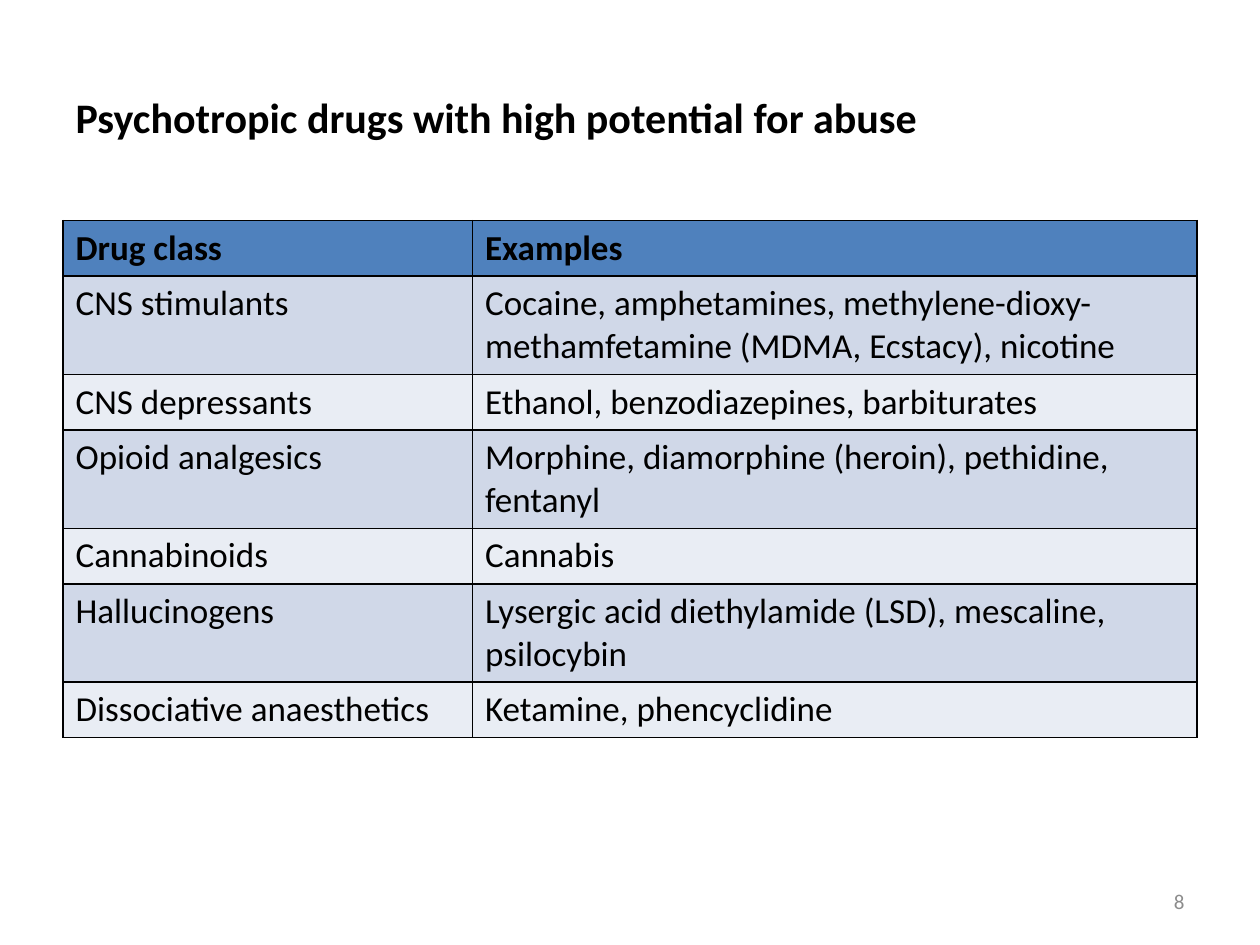
from lxml.etree import SubElement
from pptx import Presentation
from pptx.dml.color import RGBColor
from pptx.enum.text import MSO_ANCHOR, PP_ALIGN
from pptx.oxml.ns import qn
from pptx.util import Inches, Pt

W, H = 10, 7.5
MARGIN = 0.05 * W
CONTENT_W = W - 2 * MARGIN
COL_SHARES = (0.36, 0.64)
ROW_H = 0.41
FONT = "Calibri"
BLACK, GREY = "000000", "8C8C8C"
HEADER_FILL, BAND_FILLS = "4F81BD", ("D0D8E8", "E9EDF4")

DRUGS = [
    ("Drug class", "Examples"),
    ("CNS stimulants", "Cocaine, amphetamines, methylene-dioxy-methamfetamine "
                       "(MDMA, Ecstacy), nicotine"),
    ("CNS depressants", "Ethanol, benzodiazepines, barbiturates"),
    ("Opioid analgesics", "Morphine, diamorphine (heroin), pethidine, fentanyl"),
    ("Cannabinoids", "Cannabis"),
    ("Hallucinogens", "Lysergic acid diethylamide (LSD), mescaline, psilocybin"),
    ("Dissociative anaesthetics", "Ketamine, phencyclidine"),
]


def color(value):
    return RGBColor.from_string(value)


def write(tf, text, size, fill=BLACK, bold=False, align=PP_ALIGN.LEFT):
    p = tf.paragraphs[0]
    p.alignment = align
    r = p.add_run()
    r.text = text
    r.font.name, r.font.size, r.font.bold = FONT, Pt(size), bold
    r.font.color.rgb = color(fill)


def add_borders(cell, line=BLACK, width=1):
    tc_pr = cell._tc.get_or_add_tcPr()
    for i, side in enumerate(("lnL", "lnR", "lnT", "lnB")):
        # Borders must come before the cell's fill
        ln = tc_pr.makeelement(qn(f"a:{side}"), {"w": str(Pt(width))})
        tc_pr.insert(i, ln)
        solid = SubElement(ln, qn("a:solidFill"))
        SubElement(solid, qn("a:srgbClr"), val=line)


def add_title(s, text):
    sp = s.shapes.title
    sp.left, sp.top = Inches(MARGIN), Inches(0.04 * H)
    sp.width, sp.height = Inches(CONTENT_W), Inches(1.25)
    sp.text_frame.vertical_anchor = MSO_ANCHOR.MIDDLE
    write(sp.text_frame, text, 24, bold=True)


def add_drug_table(s, rows):
    table = s.shapes.add_table(
        len(rows), len(COL_SHARES), Inches(MARGIN), Inches(1.75),
        Inches(CONTENT_W), Inches(ROW_H * len(rows))).table
    for col, share in zip(table.columns, COL_SHARES):
        col.width = Inches(round(CONTENT_W * share * 4) / 4)
    for i, values in enumerate(rows):
        table.rows[i].height = Inches(ROW_H)
        for j, text in enumerate(values):
            cell = table.cell(i, j)
            cell.fill.solid()
            fill = BAND_FILLS[(i - 1) % 2] if i else HEADER_FILL
            cell.fill.fore_color.rgb = color(fill)
            add_borders(cell)
            write(cell.text_frame, text, 20, bold=i == 0)


def add_page_number(s, number):
    width = 2.33
    sp = s.shapes.add_textbox(Inches(W - MARGIN - width), Inches(6.95),
                              Inches(width), Inches(0.4))
    tf = sp.text_frame
    tf.word_wrap = True
    tf.vertical_anchor = MSO_ANCHOR.MIDDLE
    write(tf, number, 12, GREY, align=PP_ALIGN.RIGHT)


def main():
    prs = Presentation()
    prs.slide_width, prs.slide_height = Inches(W), Inches(H)
    s = prs.slides.add_slide(prs.slide_layouts[5])  # Title Only
    add_title(s, "Psychotropic drugs with high potential for abuse")
    add_drug_table(s, DRUGS)
    add_page_number(s, "8")
    prs.save("out.pptx")


if __name__ == "__main__":
    main()
